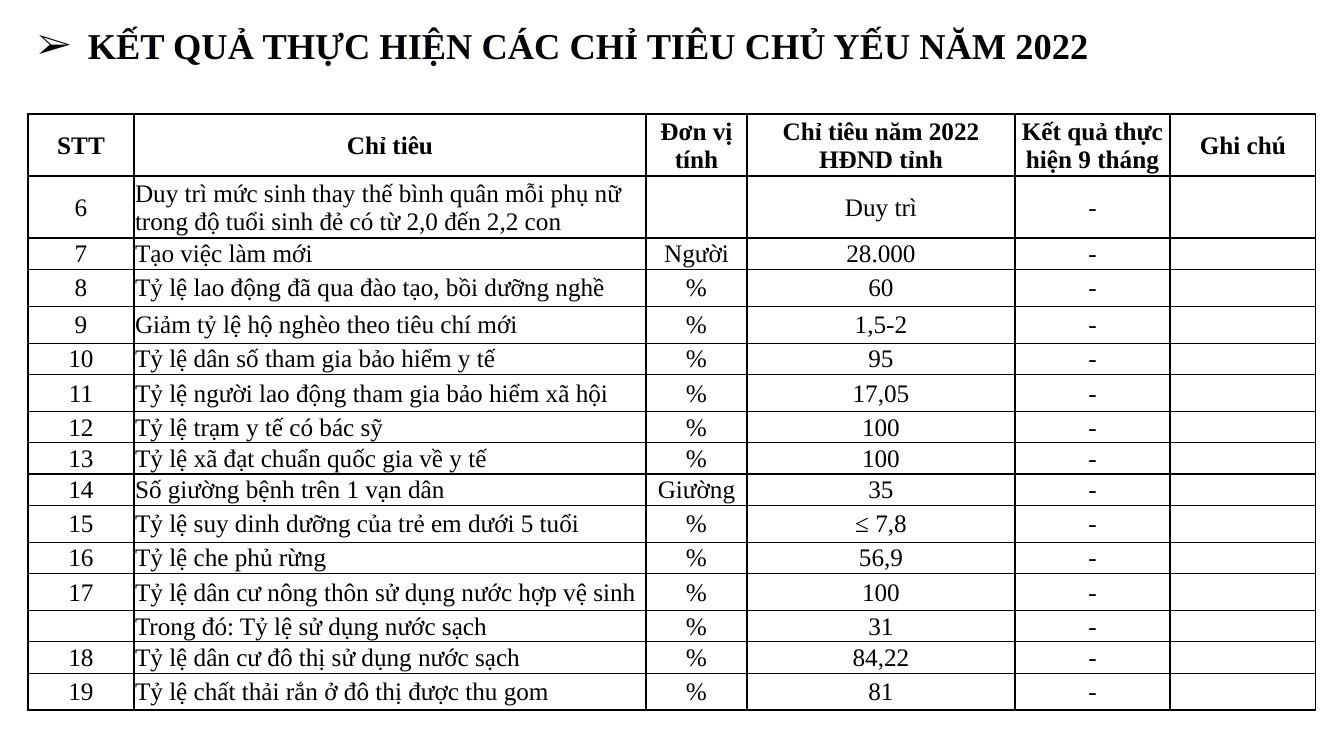
import lxml.etree
import pptx
import pptx.dml.color
import pptx.enum.text
import pptx.oxml.ns
import pptx.util

# Content
TITLE = "KẾT QUẢ THỰC HIỆN CÁC CHỈ TIÊU CHỦ YẾU NĂM 2022"
HEADER = ("STT", "Chỉ tiêu", "Đơn vị tính", "Chỉ tiêu năm 2022 HĐND tỉnh",
          "Kết quả thực hiện 9 tháng", "Ghi chú")
# Row height kind, number, indicator, unit, target
INDICATORS = [
    ("double", "6", "Duy trì mức sinh thay thế bình quân mỗi phụ nữ "
     "trong độ tuổi sinh đẻ có từ 2,0 đến 2,2 con", "", "Duy trì"),
    ("short", "7", "Tạo việc làm mới", "Người", "28.000"),
    ("tall", "8", "Tỷ lệ lao động đã qua đào tạo, bồi dưỡng nghề", "%", "60"),
    ("tall", "9", "Giảm tỷ lệ hộ nghèo theo tiêu chí mới", "%", "1,5-2"),
    ("short", "10", "Tỷ lệ dân số tham gia bảo hiểm y tế", "%", "95"),
    ("tall", "11", "Tỷ lệ người lao động tham gia bảo hiểm xã hội", "%", "17,05"),
    ("short", "12", "Tỷ lệ trạm y tế có bác sỹ", "%", "100"),
    ("short", "13", "Tỷ lệ xã đạt chuẩn quốc gia về y tế", "%", "100"),
    ("short", "14", "Số giường bệnh trên 1 vạn dân", "Giường", "35"),
    ("tall", "15", "Tỷ lệ suy dinh dưỡng của trẻ em dưới 5 tuổi", "%", "≤ 7,8"),
    ("short", "16", "Tỷ lệ che phủ rừng", "%", "56,9"),
    ("tall", "17", "Tỷ lệ dân cư nông thôn sử dụng nước hợp vệ sinh", "%", "100"),
    ("short", "", "Trong đó: Tỷ lệ sử dụng nước sạch", "%", "31"),
    ("short", "18", "Tỷ lệ dân cư đô thị sử dụng nước sạch", "%", "84,22"),
    ("tall", "19", "Tỷ lệ chất thải rắn ở đô thị được thu gom", "%", "81"),
]
RESULT, NOTE = "-", ""

# Layout in px
PX = 914400 / 100.8
SLIDE_SIZE = (1344, 756)
LEFT, WIDTH = 28, 1288
TITLE_TOP, TITLE_HEIGHT, TITLE_INDENT = 18, 54, 50
TABLE_TOP = 114
COLUMN_WIDTHS = (106, 512, 101, 268, 155, 146)
ROW_HEIGHTS = {"double": 62, "short": 31, "tall": 37}
FONT = "Times New Roman"
COLORS = {"title": "040206", "text": "000000", "border": "000000"}
ALIGN = pptx.enum.text.PP_ALIGN


def emu(pixels):
    return pptx.util.Emu(round(pixels * PX))


def add_xml(parent, tag, **attributes):
    return lxml.etree.SubElement(parent, pptx.oxml.ns.qn(tag), attributes)


def write_text(frame, text, size=18, bold=False, color="text", align=ALIGN.LEFT):
    paragraph = frame.paragraphs[0]
    paragraph.alignment = align
    if not text:
        # An empty cell keeps the line height of the table text
        ending = add_xml(paragraph._p, "a:endParaRPr", sz=str(size * 100))
        add_xml(ending, "a:latin", typeface=FONT)
        return paragraph
    run = paragraph.add_run()
    run.text = text
    run.font.name = FONT
    run.font.size = pptx.util.Pt(size)
    run.font.bold = bold
    run.font.color.rgb = pptx.dml.color.RGBColor.from_string(COLORS[color])
    return paragraph


def draw_borders(cell):
    properties = cell._tc.get_or_add_tcPr()
    for position, side in enumerate("LRTB"):
        line = add_xml(properties, f"a:ln{side}", w=str(pptx.util.Pt(1)))
        fill = add_xml(line, "a:solidFill")
        add_xml(fill, "a:srgbClr", val=COLORS["border"])
        properties.insert(position, line)


def add_title(slide):
    box = slide.shapes.add_textbox(emu(LEFT), emu(TITLE_TOP), emu(WIDTH), emu(TITLE_HEIGHT))
    box.text_frame.word_wrap = True
    paragraph = write_text(box.text_frame, TITLE, size=26, bold=True, color="title")
    properties = paragraph._p.get_or_add_pPr()
    properties.set("marL", str(emu(TITLE_INDENT)))
    properties.set("indent", str(-emu(TITLE_INDENT)))
    add_xml(properties, "a:buFont", typeface=FONT)
    add_xml(properties, "a:buChar", char="➢")


def add_indicator_table(slide):
    rows = [HEADER] + [(*indicator[1:], RESULT, NOTE) for indicator in INDICATORS]
    heights = [ROW_HEIGHTS[kind] for kind in ["double"] + [row[0] for row in INDICATORS]]
    table = slide.shapes.add_table(len(rows), len(HEADER), emu(LEFT), emu(TABLE_TOP),
                                   emu(WIDTH), emu(sum(heights))).table
    table.first_row = table.horz_banding = False
    for column, width in zip(table.columns, COLUMN_WIDTHS):
        column.width = emu(width)
    for row_index, (values, height) in enumerate(zip(rows, heights)):
        table.rows[row_index].height = emu(height)
        is_header = row_index == 0
        for column_index, value in enumerate(values):
            cell = table.cell(row_index, column_index)
            cell.margin_left = cell.margin_right = cell.margin_top = emu(1)
            cell.margin_bottom = 0
            cell.vertical_anchor = pptx.enum.text.MSO_ANCHOR.MIDDLE
            cell.fill.background()
            draw_borders(cell)
            is_name = column_index == 1 and not is_header
            write_text(cell.text_frame, value, bold=is_header,
                       align=ALIGN.LEFT if is_name else ALIGN.CENTER)


def main():
    presentation = pptx.Presentation()
    presentation.slide_width, presentation.slide_height = map(emu, SLIDE_SIZE)
    slide = presentation.slides.add_slide(presentation.slide_layouts[6])
    add_title(slide)
    add_indicator_table(slide)
    presentation.save("out.pptx")


if __name__ == "__main__":
    main()
